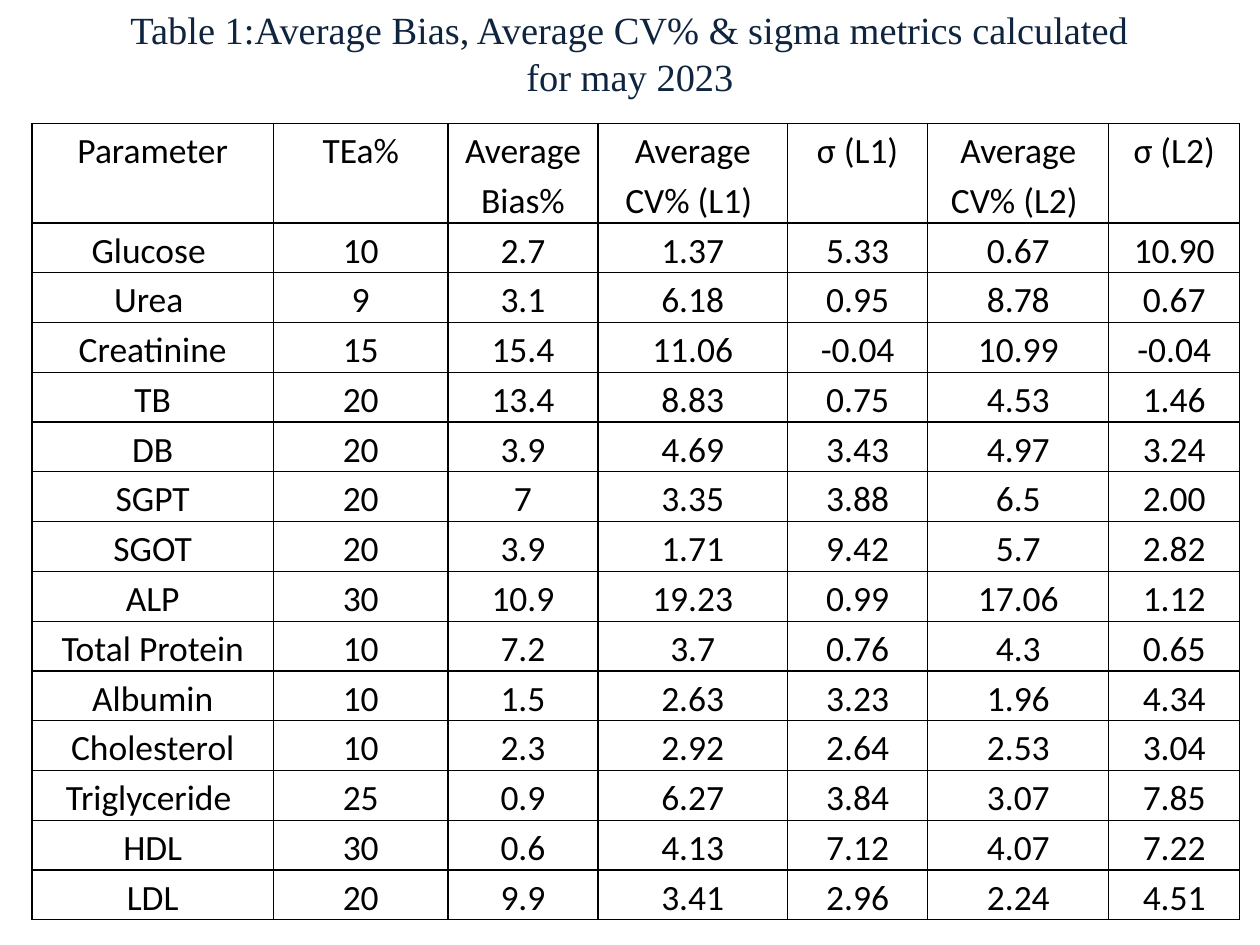
from dataclasses import dataclass

from lxml.etree import SubElement
from pptx import Presentation
from pptx.dml.color import RGBColor
from pptx.enum.text import MSO_ANCHOR as Anchor, MSO_AUTO_SIZE as AutoSize, PP_ALIGN as Align
from pptx.oxml.ns import qn
from pptx.util import Inches, Pt

NAVY = RGBColor(0x0F, 0x24, 0x3E)
BLACK = RGBColor(0x00, 0x00, 0x00)

TITLE_LINES = ("Table 1:Average Bias, Average CV% & sigma metrics calculated", "for may 2023")
TITLE_FONT = {"name": "Times New Roman", "size": Pt(26), "bold": False}
TABLE_FONT = {"name": "Calibri", "size": Pt(24), "bold": False}

COLUMN_WIDTHS = (2.27, 1.64, 1.41, 1.78, 1.32, 1.7, 1.23)
HEADER_HEIGHT, ROW_HEIGHT = 0.9, 0.45
LABEL_COLUMNS = 2

HEADER = ("Parameter", "TEa%", "Average Bias%", "Average CV% (L1) ", "σ (L1)",
          "Average CV% (L2) ", "σ (L2)")


@dataclass(frozen=True)
class Assay:
    parameter: str
    allowable_error: str
    metrics: tuple[str, ...]  # bias, CV and sigma level 1, CV and sigma level 2

    def texts(self) -> tuple[str, ...]:
        return (self.parameter, self.allowable_error, *self.metrics)


@dataclass(frozen=True)
class CellStyle:
    cell: dict
    paragraph: dict


LABEL_STYLE = CellStyle(
    {"margin_left": Inches(0.09), "margin_right": Inches(0.09), "margin_top": 0,
     "margin_bottom": 0, "vertical_anchor": Anchor.TOP},
    {"alignment": Align.CENTER, "line_spacing": 1.15},
)
METRIC_STYLE = CellStyle(
    {"margin_left": Inches(0.01), "margin_right": Inches(0.01), "margin_top": Inches(0.01),
     "margin_bottom": 0, "vertical_anchor": Anchor.BOTTOM},
    {"alignment": Align.CENTER},
)

ASSAYS = (
    Assay("Glucose ", "10", ("2.7", "1.37", "5.33", "0.67", "10.90")),
    Assay("Urea ", "9", ("3.1", "6.18", "0.95", "8.78", "0.67")),
    Assay("Creatinine", "15", ("15.4", "11.06", "-0.04", "10.99", "-0.04")),
    Assay("TB", "20", ("13.4", "8.83", "0.75", "4.53", "1.46")),
    Assay("DB", "20", ("3.9", "4.69", "3.43", "4.97", "3.24")),
    Assay("SGPT", "20", ("7", "3.35", "3.88", "6.5", "2.00")),
    Assay("SGOT", "20", ("3.9", "1.71", "9.42", "5.7", "2.82")),
    Assay("ALP", "30", ("10.9", "19.23", "0.99", "17.06", "1.12")),
    Assay("Total Protein", "10", ("7.2", "3.7", "0.76", "4.3", "0.65")),
    Assay("Albumin", "10", ("1.5", "2.63", "3.23", "1.96", "4.34")),
    Assay("Cholesterol", "10", ("2.3", "2.92", "2.64", "2.53", "3.04")),
    Assay("Triglyceride ", "25", ("0.9", "6.27", "3.84", "3.07", "7.85")),
    Assay("HDL", "30", ("0.6", "4.13", "7.12", "4.07", "7.22")),
    Assay("LDL", "20", ("9.9", "3.41", "2.96", "2.24", "4.51")),
)


def apply_format(target, values: dict) -> None:
    for name, value in values.items():
        setattr(target, name, value)


def add_borders(cell) -> None:
    properties = cell._tc.get_or_add_tcPr()
    for side in ("a:lnL", "a:lnR", "a:lnT", "a:lnB"):
        line = SubElement(properties, qn(side), w=str(Pt(1)))
        fill = SubElement(line, qn("a:solidFill"))
        SubElement(fill, qn("a:srgbClr"), val=str(BLACK))


def write_cell(cell, text: str, style: CellStyle) -> None:
    apply_format(cell, style.cell)
    add_borders(cell)
    cell.fill.background()
    paragraph = cell.text_frame.paragraphs[0]
    apply_format(paragraph, style.paragraph)
    run = paragraph.add_run()
    run.text = text
    apply_format(run.font, TABLE_FONT)
    run.font.color.rgb = BLACK


def write_title(title) -> None:
    apply_format(title, {"left": 0, "top": 0, "width": Inches(11.84), "height": Inches(0.99)})
    frame = title.text_frame
    apply_format(frame, {
        "word_wrap": True, "auto_size": AutoSize.NONE, "vertical_anchor": Anchor.MIDDLE,
        "margin_left": Inches(0.11), "margin_right": Inches(0.11),
        "margin_top": Inches(0.05), "margin_bottom": Inches(0.05),
    })
    paragraph = frame.paragraphs[0]
    paragraph.alignment = Align.CENTER
    for index, text in enumerate(TITLE_LINES):
        if index:
            paragraph.add_line_break()
        run = paragraph.add_run()
        run.text = text
        apply_format(run.font, TITLE_FONT)
        run.font.color.rgb = NAVY


def add_metrics_table(slide) -> None:
    rows = [HEADER, *(assay.texts() for assay in ASSAYS)]
    heights = [HEADER_HEIGHT] + [ROW_HEIGHT] * len(ASSAYS)
    table = slide.shapes.add_table(
        len(rows), len(HEADER), Inches(0.3), Inches(1.16),
        Inches(sum(COLUMN_WIDTHS)), Inches(sum(heights)),
    ).table
    apply_format(table, {"first_row": False, "horz_banding": False})
    for column, width in zip(table.columns, COLUMN_WIDTHS):
        column.width = Inches(width)
    for row_index, (texts, height) in enumerate(zip(rows, heights)):
        table.rows[row_index].height = Inches(height)
        for column_index, text in enumerate(texts):
            is_label = row_index == 0 or column_index < LABEL_COLUMNS
            style = LABEL_STYLE if is_label else METRIC_STYLE
            write_cell(table.cell(row_index, column_index), text, style)


def main() -> None:
    presentation = Presentation()
    apply_format(presentation, {"slide_width": Inches(11.84), "slide_height": Inches(8.88)})
    slide = presentation.slides.add_slide(presentation.slide_layouts.get_by_name("Title Only"))

    # Title
    write_title(slide.shapes.title)

    # Table of sigma metrics
    add_metrics_table(slide)

    presentation.save("out.pptx")


if __name__ == "__main__":
    main()
